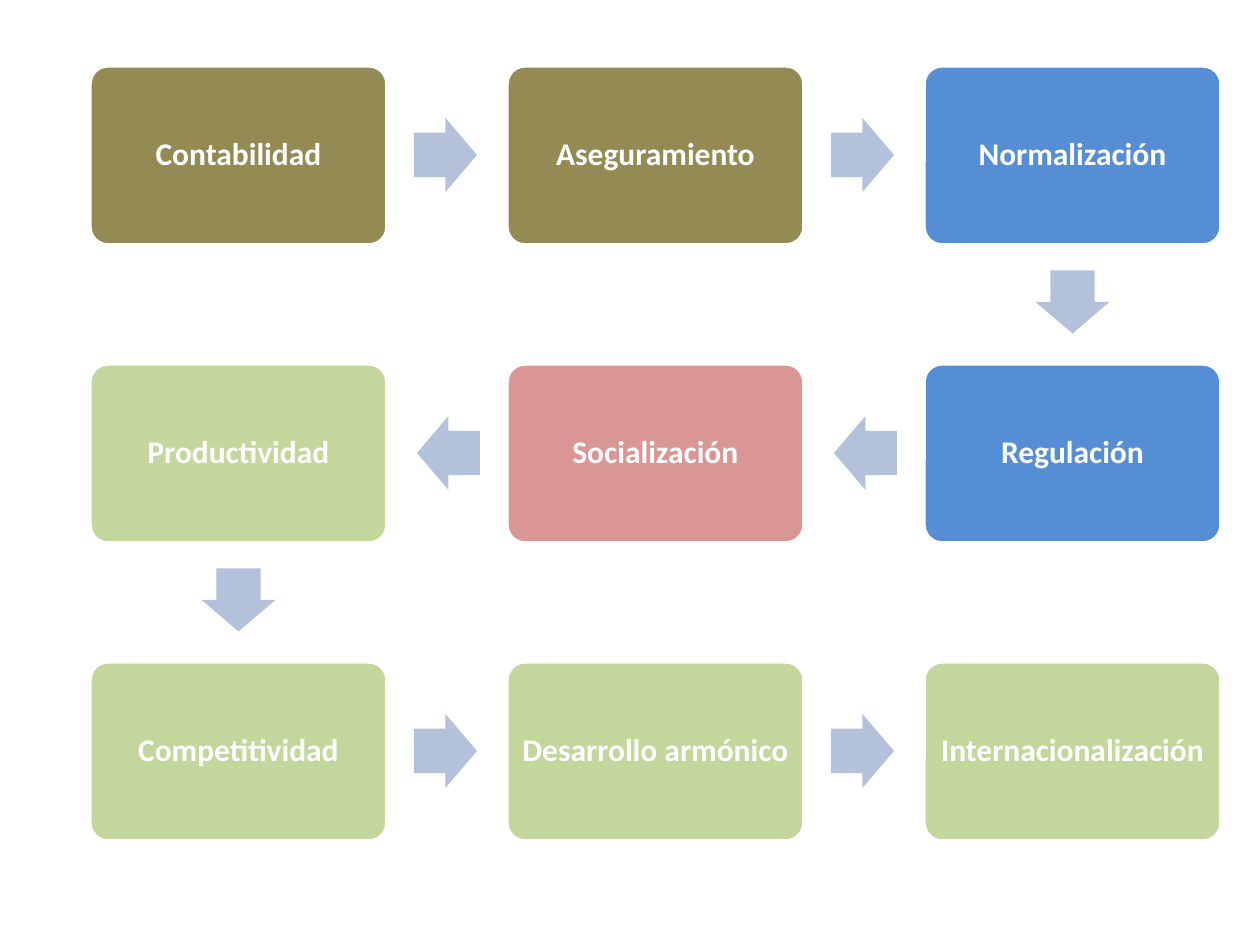
from dataclasses import dataclass

from pptx import Presentation
from pptx.dml.color import RGBColor
from pptx.enum.shapes import MSO_SHAPE as Preset
from pptx.enum.text import MSO_ANCHOR as Anchor, PP_ALIGN as Align
from pptx.util import Emu, Pt

EMU_PER_PX = 914400 / 126


def px(length):
    return Emu(round(length * EMU_PER_PX))


@dataclass(frozen=True)
class Theme:
    white: str = "FFFFFF"
    olive: str = "948A54"
    blue: str = "558ED5"
    rose: str = "D99694"
    green: str = "C3D69B"
    arrow: str = "B3C1DB"
    font: str = "Calibri"
    label_size: int = 18
    outline: int = 2


def apply_format(target, values):
    for name, value in values.items():
        setattr(target, name, value)


class SlideBuilder:
    def __init__(self, slide, theme):
        self.slide = slide
        self.theme = theme

    def add_preset(self, preset, box, color, adjustments):
        shape = self.slide.shapes.add_shape(preset, *map(px, box))
        shape.shadow.inherit = False
        shape.fill.solid()
        shape.fill.fore_color.rgb = RGBColor.from_string(color)
        for index, value in enumerate(adjustments):
            shape.adjustments[index] = value
        return shape

    def add_step(self, box, label, color):
        white = RGBColor.from_string(self.theme.white)
        shape = self.add_preset(Preset.ROUNDED_RECTANGLE, box, color, [0.1])
        shape.line.color.rgb = white
        shape.line.width = Pt(self.theme.outline)

        # The rounded corners already inset the text by about 5 px
        frame = shape.text_frame
        inset = px(4)
        apply_format(frame, {
            "word_wrap": True, "vertical_anchor": Anchor.MIDDLE,
            "margin_left": inset, "margin_right": inset,
            "margin_top": inset, "margin_bottom": inset,
        })
        paragraph = frame.paragraphs[0]
        apply_format(paragraph, {
            "text": label, "alignment": Align.CENTER, "line_spacing": 0.9,
        })
        apply_format(paragraph.font, {
            "name": self.theme.font, "size": Pt(self.theme.label_size), "bold": True,
        })
        paragraph.font.color.rgb = white

    def add_arrow(self, center_x, center_y, rotation):
        width, height = 63, 74
        box = (center_x - width // 2, center_y - height // 2, width, height)
        shape = self.add_preset(Preset.RIGHT_ARROW, box, self.theme.arrow, [0.6, 0.5])
        shape.line.fill.background()
        shape.rotation = rotation


def main():
    theme = Theme()
    presentation = Presentation()
    presentation.slide_width, presentation.slide_height = px(1260), px(945)
    slide = presentation.slides.add_slide(presentation.slide_layouts[6])
    builder = SlideBuilder(slide, theme)

    # Steps in reading order of the winding process
    steps = [
        ("Contabilidad", theme.olive),
        ("Aseguramiento", theme.olive),
        ("Normalización", theme.blue),
        ("Regulación", theme.blue),
        ("Socialización", theme.rose),
        ("Productividad", theme.green),
        ("Competitividad", theme.green),
        ("Desarrollo armónico", theme.green),
        ("Internacionalización", theme.green),
    ]

    # Grid: every second row runs from right to left
    columns = 3
    left, top, width, height = 90, 66, 297, 179
    pitch_x, pitch_y = 417, 298
    arrow_reach_x, arrow_reach_y = 207, 147

    for index, (label, color) in enumerate(steps):
        row, position = divmod(index, columns)
        backward = row % 2 == 1
        column = columns - 1 - position if backward else position
        x, y = left + column * pitch_x, top + row * pitch_y
        builder.add_step((x, y, width, height), label, color)

        # Arrow towards the next step
        if index == len(steps) - 1:
            continue
        center_x, center_y = x + width // 2, y + height // 2
        if position == columns - 1:
            builder.add_arrow(center_x, center_y + arrow_reach_y, 90)
        elif backward:
            builder.add_arrow(center_x - arrow_reach_x, center_y, 180)
        else:
            builder.add_arrow(center_x + arrow_reach_x, center_y, 0)

    presentation.save("out.pptx")


if __name__ == "__main__":
    main()
